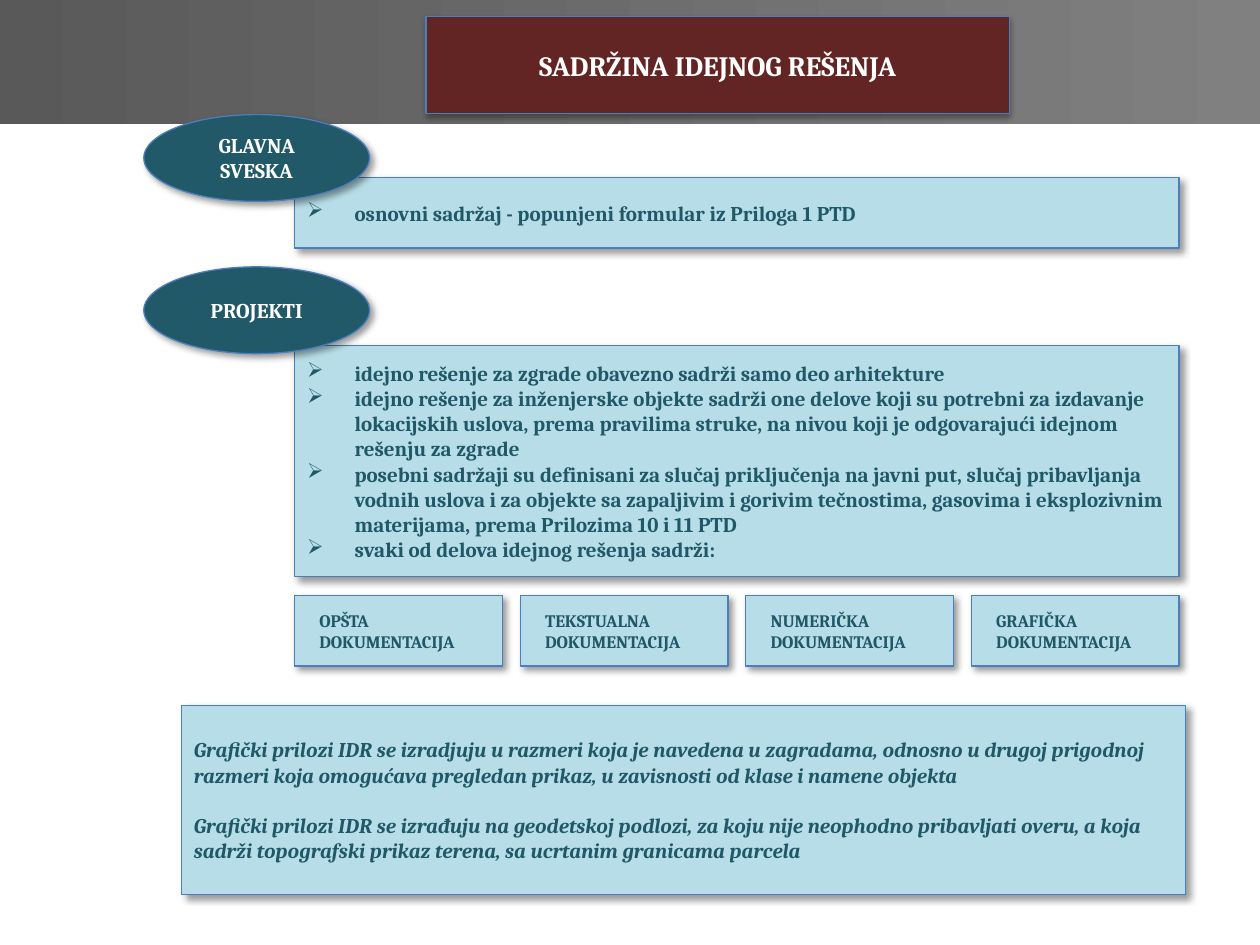
import pptx
import pptx.dml.color
import pptx.enum.shapes
import pptx.enum.text
import pptx.oxml
import pptx.oxml.ns
import pptx.util
from dataclasses import dataclass
from lxml import etree

Cm = pptx.util.Cm
Pt = pptx.util.Pt
RGB = pptx.dml.color.RGBColor.from_string
SHAPE = pptx.enum.shapes.MSO_SHAPE
ALIGN = pptx.enum.text.PP_ALIGN


@dataclass(frozen=True)
class Theme:
    font: str = "Cambria"
    band_start: str = "595959"
    band_end: str = "808080"
    title_fill: str = "632523"
    oval_fill: str = "215968"
    panel_fill: str = "B7DEE8"
    outline: str = "4B7EBC"
    dark_text: str = "215868"
    light_text: str = "FFFFFF"
    title_size: int = 16
    body_size: int = 12
    label_size: int = 10
    # Shadow: opacity in percent, blur and distance in points, angle in degrees
    title_shadow: tuple = (35, 3.1, 1.8, 90)
    panel_shadow: tuple = (40, 4, 3, 45)


THEME = Theme()


def add_shadow(shape, opacity, blur, distance, angle):
    shape.shadow.inherit = False
    qn = pptx.oxml.ns.qn
    effects = shape._element.spPr.find(qn("a:effectLst"))
    shadow = etree.SubElement(
        effects, qn("a:outerShdw"), blurRad=str(Pt(blur)), dist=str(Pt(distance)),
        dir=str(angle * 60000), algn="ctr", rotWithShape="0")
    color = etree.SubElement(shadow, qn("a:srgbClr"), val="000000")
    etree.SubElement(color, qn("a:alpha"), val=str(opacity * 1000))


def set_indent(paragraph, left, bullet=None):
    properties = paragraph._p.get_or_add_pPr()
    properties.set("marL", str(Cm(left)))
    if bullet:
        properties.set("indent", str(-Cm(left)))
        mark = etree.SubElement(properties, pptx.oxml.ns.qn("a:buChar"))
        mark.set("char", bullet)


def add_panel(slide, box, texts, kind=SHAPE.RECTANGLE, fill=THEME.panel_fill,
              color=THEME.dark_text, size=THEME.body_size, align=ALIGN.LEFT,
              italic=False, indent=0, bullet=None, gap=0, shadow=THEME.panel_shadow):
    shape = slide.shapes.add_shape(kind, *map(Cm, box))
    shape.fill.solid()
    shape.fill.fore_color.rgb = RGB(fill)
    shape.line.color.rgb = RGB(THEME.outline)
    shape.line.width = Pt(0.75)
    add_shadow(shape, *shadow)
    frame = shape.text_frame
    frame.word_wrap = True
    frame.vertical_anchor = pptx.enum.text.MSO_ANCHOR.MIDDLE
    font_format = {"name": THEME.font, "size": Pt(size), "bold": True, "italic": italic}
    for index, text in enumerate(texts):
        paragraph = frame.add_paragraph() if index else frame.paragraphs[0]
        paragraph.alignment = align
        if index and gap:
            paragraph.space_before = Pt(gap)
        if indent:
            set_indent(paragraph, indent, bullet)
        run = paragraph.add_run()
        run.text = text
        for name, value in font_format.items():
            setattr(run.font, name, value)
        run.font.color.rgb = RGB(color)
    return shape


def add_header(slide, box, title):
    left, top, width, height = box
    band = slide.shapes.add_shape(SHAPE.RECTANGLE, *map(Cm, box))
    band.shadow.inherit = False
    band.line.fill.background()
    band.fill.gradient()
    band.fill.gradient_angle = 0
    for stop, color in zip(band.fill.gradient_stops, (THEME.band_start, THEME.band_end)):
        stop.color.rgb = RGB(color)
    add_panel(slide, (left + 8.59, top + 0.33, 11.76, 1.96), [title],
              fill=THEME.title_fill, color=THEME.light_text, size=THEME.title_size,
              align=ALIGN.CENTER, shadow=THEME.title_shadow)


def add_section(slide, box, drop, heading, items):
    """Bulleted panel that starts `drop` below the top of its oval heading."""
    left, top, width, height = box
    inset = 3.04
    add_panel(slide, (left + inset, top + drop, width - inset, height - drop), items,
              indent=0.96, bullet="➢")
    add_panel(slide, (left, top, 4.55, 1.75), [heading], kind=SHAPE.OVAL,
              fill=THEME.oval_fill, color=THEME.light_text, align=ALIGN.CENTER)


def add_label_row(slide, box, labels, gap=0.36):
    left, top, width, height = box
    label_width = (width - gap * (len(labels) - 1)) / len(labels)
    for index, label in enumerate(labels):
        add_panel(slide, (left + index * (label_width + gap), top, label_width, height),
                  [label], size=THEME.label_size, indent=0.25)


def add_note(slide, box, texts):
    add_panel(slide, box, texts, italic=True, gap=14.4)


def main():
    presentation = pptx.Presentation()
    presentation.slide_width = Cm(25.4)
    presentation.slide_height = Cm(19.05)
    slide = presentation.slides.add_slide(presentation.slide_layouts[6])

    # Title band
    add_header(slide, (0, 0, 25.4, 2.51), "SADRŽINA IDEJNOG REŠENJA")

    # Sections with oval headings
    add_section(slide, (2.9, 2.31, 20.87, 2.69), 1.27, "GLAVNA SVESKA", [
        "osnovni sadržaj - popunjeni formular iz Priloga 1 PTD",
    ])
    add_section(slide, (2.9, 5.38, 20.87, 6.25), 1.58, "PROJEKTI", [
        "idejno rešenje za zgrade obavezno sadrži samo deo arhitekture",
        "idejno rešenje za inženjerske objekte sadrži one delove koji su potrebni za "
        "izdavanje lokacijskih uslova, prema pravilima struke, na nivou koji je "
        "odgovarajući idejnom rešenju za zgrade",
        "posebni sadržaji su definisani za slučaj priključenja na javni put, slučaj "
        "pribavljanja vodnih uslova i za objekte sa zapaljivim i gorivim tečnostima, "
        "gasovima i eksplozivnim materijama, prema Prilozima 10 i 11 PTD",
        "svaki od delova idejnog rešenja sadrži:",
    ])

    # Parts of each project
    add_label_row(slide, (5.94, 12.01, 17.83, 1.42), [
        f"{part} DOKUMENTACIJA" for part in ("OPŠTA", "TEKSTUALNA", "NUMERIČKA", "GRAFIČKA")
    ])

    # Note on drawings
    add_note(slide, (3.66, 14.22, 20.24, 3.81), [
        "Grafički prilozi IDR se izradjuju u razmeri koja je navedena u zagradama, "
        "odnosno u drugoj prigodnoj razmeri koja omogućava pregledan prikaz, u "
        "zavisnosti od klase i namene objekta",
        "Grafički prilozi IDR se izrađuju na geodetskoj podlozi, za koju nije neophodno "
        "pribavljati overu, a koja sadrži topografski prikaz terena, sa ucrtanim "
        "granicama parcela",
    ])

    presentation.save("out.pptx")


if __name__ == "__main__":
    main()
